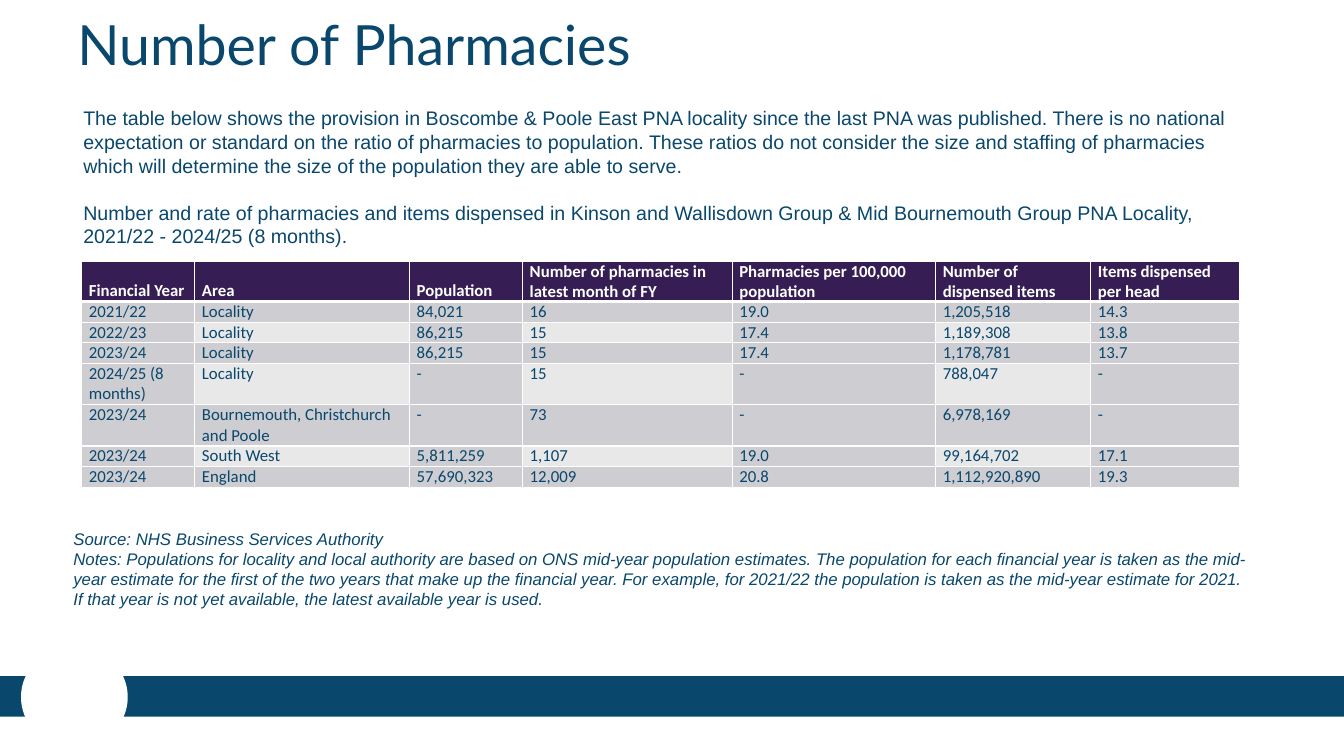
from lxml import etree
from pptx import Presentation
from pptx.dml.color import RGBColor
from pptx.enum import shapes, text
from pptx.oxml import ns
from pptx.util import Cm, Pt

COLOURS = {"blue": "09476D", "white": "FFFFFF", "header": "361E54",
           "band": "CECDD1", "light": "E8E8E9"}

TITLE = "Number of Pharmacies"
INTRO = [
    "The table below shows the provision in Boscombe & Poole East PNA locality since the last PNA "
    "was published. There is no national expectation or standard on the ratio of pharmacies to "
    "population. These ratios do not consider the size and staffing of pharmacies which will "
    "determine the size of the population they are able to serve.",
    "Number and rate of pharmacies and items dispensed in Kinson and Wallisdown Group & Mid "
    "Bournemouth Group PNA Locality, 2021/22 - 2024/25 (8 months).",
]
NOTES = [
    "Source: NHS Business Services Authority",
    "Notes: Populations for locality and local authority are based on ONS mid-year population "
    "estimates. The population for each financial year is taken as the mid-year estimate for the "
    "first of the two years that make up the financial year. For example, for 2021/22 the "
    "population is taken as the mid-year estimate for 2021. If that year is not yet available, "
    "the latest available year is used.",
]
PROVISION = [
    ("Financial Year", "Area", "Population", "Number of pharmacies in latest month of FY",
     "Pharmacies per 100,000 population", "Number of dispensed items", "Items dispensed per head"),
    ("2021/22", "Locality", "84,021", "16", "19.0", "1,205,518", "14.3"),
    ("2022/23", "Locality", "86,215", "15", "17.4", "1,189,308", "13.8"),
    ("2023/24", "Locality", "86,215", "15", "17.4", "1,178,781", "13.7"),
    ("2024/25 (8 months)", "Locality", "-", "15", "-", "788,047", "-"),
    ("2023/24", "Bournemouth, Christchurch and Poole", "-", "73", "-", "6,978,169", "-"),
    ("2023/24", "South West", "5,811,259", "1,107", "19.0", "99,164,702", "17.1"),
    ("2023/24", "England", "57,690,323", "12,009", "20.8", "1,112,920,890", "19.3"),
]
COLUMN_WIDTHS = [2.85, 5.41, 2.85, 5.28, 5.13, 3.91, 3.76]
ROW_LINES = [1.9, 1, 1, 1, 2, 2, 1, 1]
LINE_HEIGHT = 0.52


def colour(name):
    return RGBColor.from_string(COLOURS[name])


def write(frame, paragraphs, font="Arial", size=12, ink="blue", bold=False, italic=False,
          gap=0, spacing=None):
    """Fill a text frame; gap is the space in points between paragraphs."""
    frame.word_wrap = True
    for index, words in enumerate(paragraphs):
        paragraph = frame.paragraphs[0] if index == 0 else frame.add_paragraph()
        if index and gap:
            paragraph.space_before = Pt(gap)
        if spacing:
            paragraph.line_spacing = spacing
        run = paragraph.add_run()
        run.text = words
        run.font.name, run.font.size = font, Pt(size)
        run.font.bold, run.font.italic = bold, italic
        run.font.color.rgb = colour(ink)


def add_text(left, top, width, height, paragraphs, **style):
    frame = slide.shapes.add_textbox(Cm(left), Cm(top), Cm(width), Cm(height)).text_frame
    frame.vertical_anchor = text.MSO_ANCHOR.MIDDLE
    write(frame, paragraphs, **style)


def add_footer_shape(kind, left, top, width, height, fill):
    shape = slide.shapes.add_shape(kind, Cm(left), Cm(top), Cm(width), Cm(height))
    shape.shadow.inherit = False
    shape.fill.solid()
    shape.fill.fore_color.rgb = colour(fill)
    shape.line.fill.background()


def add_borders(cell, bottom):
    """Draw white cell borders, 1 pt except for the bottom one."""
    properties = cell._tc.get_or_add_tcPr()
    for index, (side, points) in enumerate(zip("LRTB", (1, 1, 1, bottom))):
        line = etree.Element(ns.qn(f"a:ln{side}"), w=str(Pt(points)))
        fill = etree.SubElement(line, ns.qn("a:solidFill"))
        etree.SubElement(fill, ns.qn("a:srgbClr"), val=COLOURS["white"])
        properties.insert(index, line)


def add_provision_table(left, top):
    table = slide.shapes.add_table(
        len(PROVISION), len(COLUMN_WIDTHS), Cm(left), Cm(top),
        Cm(sum(COLUMN_WIDTHS)), Cm(sum(ROW_LINES) * LINE_HEIGHT)).table
    for column, width in zip(table.columns, COLUMN_WIDTHS):
        column.width = Cm(width)
    for r, (entries, lines) in enumerate(zip(PROVISION, ROW_LINES)):
        table.rows[r].height = Cm(lines * LINE_HEIGHT)
        header = r == 0
        for c, entry in enumerate(entries):
            cell = table.cell(r, c)
            cell.margin_left = cell.margin_right = Cm(0.18)
            cell.margin_top = cell.margin_bottom = 0
            cell.vertical_anchor = text.MSO_ANCHOR.BOTTOM if header else text.MSO_ANCHOR.TOP
            light = r % 2 == 0 and c % 2 == 1
            cell.fill.solid()
            cell.fill.fore_color.rgb = colour("header" if header else "light" if light else "band")
            add_borders(cell, bottom=3 if header else 1)
            write(cell.text_frame, [entry], font="Calibri", bold=header,
                  ink="white" if header else "blue")


presentation = Presentation()
presentation.slide_width, presentation.slide_height = Cm(33.87), Cm(19.05)
slide = presentation.slides.add_slide(presentation.slide_layouts[6])

add_footer_shape(shapes.MSO_SHAPE.RECTANGLE, 0, 17.04, 33.87, 1.02, "blue")
add_footer_shape(shapes.MSO_SHAPE.OVAL, 0.53, 16.28, 2.69, 2.57, "white")
add_text(1.7, 0.3, 21.59, 1.8, [TITLE], font="Lato", size=39.6, spacing=0.9)
add_text(1.85, 2.54, 30.15, 3.84, INTRO, size=14, gap=16.8)
add_provision_table(2.06, 6.58)
add_text(1.6, 13.18, 30.15, 2.31, NOTES, italic=True)

presentation.save("out.pptx")
